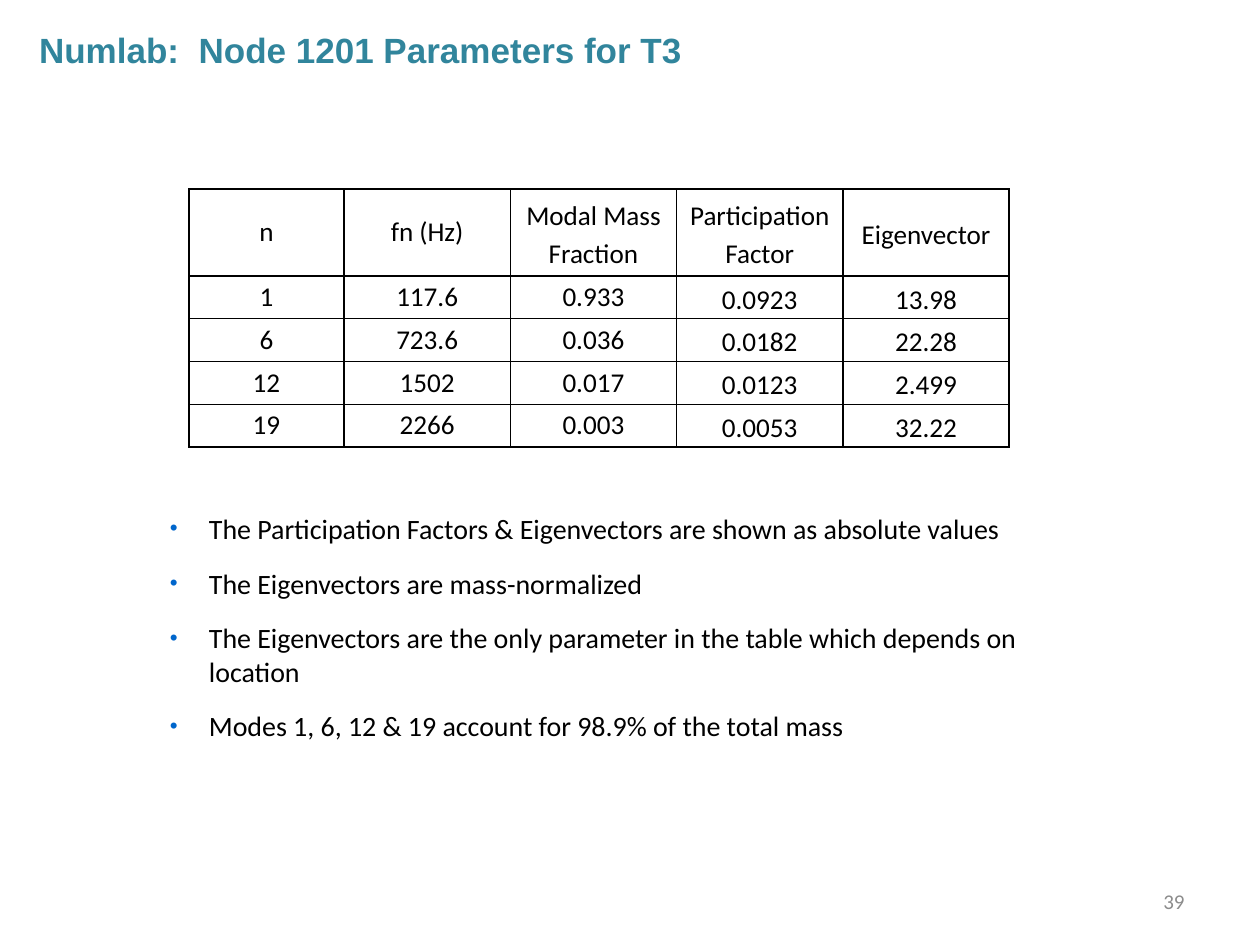
"""Build the slide of modal parameters for node 1201."""
from lxml import etree
from pptx import Presentation
from pptx.dml.color import RGBColor
from pptx.enum.text import MSO_ANCHOR, MSO_AUTO_SIZE, PP_ALIGN
from pptx.oxml.ns import qn
from pptx.util import Inches, Pt

LEFT, MID, RIGHT = PP_ALIGN.LEFT, PP_ALIGN.CENTER, PP_ALIGN.RIGHT
TOP, CENTER = MSO_ANCHOR.TOP, MSO_ANCHOR.MIDDLE
FIXED = MSO_AUTO_SIZE.NONE

TITLE = "Numlab:  Node 1201 Parameters for T3"
PAGE = "39"
ROWS = [
    ("n", "fn (Hz)", "Modal Mass Fraction", "Participation Factor", "Eigenvector"),
    ("1", "117.6", "0.933", "0.0923", "13.98"),
    ("6", "723.6", "0.036", "0.0182", "22.28"),
    ("12", "1502", "0.017", "0.0123", "2.499"),
    ("19", "2266", "0.003", "0.0053", "32.22"),
]
NOTES = [
    "The Participation Factors & Eigenvectors are shown as absolute values",
    "The Eigenvectors are mass-normalized",
    "The Eigenvectors are the only parameter in the table which depends on location",
    "Modes 1, 6, 12 & 19 account for 98.9% of the total mass",
]
WIDTHS = [1.23] + [1.32] * 4
HEIGHTS = [0.69] + [0.34] * 4
THEME = {
    "ink": "000000", "paper": "FFFFFF", "title": "31859C",
    "page": "8C8C8C", "bullet": "0066CC",
    "head": "Arial", "body": "Calibri",
    "title_pt": 20, "cell_pt": 15.5, "note_pt": 16, "page_pt": 12, "rule_pt": 1,
}


def write(frame, lines, size, color=THEME["ink"], font=THEME["body"],
          bold=False, align=LEFT, anchor=TOP, gap=0, lead=1.0, bullet=False):
    frame.word_wrap = True
    frame.vertical_anchor = anchor
    for i, line in enumerate(lines):
        para = frame.add_paragraph() if i else frame.paragraphs[0]
        para.alignment = align
        para.line_spacing = lead
        para.space_before = para.space_after = Pt(gap)
        run = para.add_run()
        run.text = line
        run.font.name, run.font.size, run.font.bold = font, Pt(size), bold
        run.font.color.rgb = RGBColor.from_string(color)
        if bullet:
            mark(para)


def mark(para):
    props = para._p.get_or_add_pPr()
    props.set("marL", str(Inches(0.31)))
    props.set("indent", str(-Inches(0.31)))
    tint = etree.SubElement(props, qn("a:buClr"))
    etree.SubElement(tint, qn("a:srgbClr"), val=THEME["bullet"])
    etree.SubElement(props, qn("a:buSzPct"), val="80000")
    etree.SubElement(props, qn("a:buFont"), typeface="Arial")
    etree.SubElement(props, qn("a:buChar"), char="•")


def border(cell):
    props = cell._tc.get_or_add_tcPr()
    for i, side in enumerate("LRTB"):
        line = etree.Element(qn(f"a:ln{side}"), w=str(Pt(THEME["rule_pt"])))
        fill = etree.SubElement(line, qn("a:solidFill"))
        etree.SubElement(fill, qn("a:srgbClr"), val=THEME["ink"])
        props.insert(i, line)


def place(shape, *box):
    shape.left, shape.top, shape.width, shape.height = map(Inches, box)


def add_grid(slide):
    table = slide.shapes.add_table(
        len(ROWS), len(WIDTHS), Inches(1.5), Inches(1.5),
        Inches(sum(WIDTHS)), Inches(sum(HEIGHTS))).table
    table.first_row = table.horz_banding = False
    for col, width in zip(table.columns, WIDTHS):
        col.width = Inches(width)
    for r, row in enumerate(ROWS):
        table.rows[r].height = Inches(HEIGHTS[r])
        for c, text in enumerate(row):
            cell = table.cell(r, c)
            cell.margin_left = cell.margin_right = Inches(0.07)
            cell.margin_top = cell.margin_bottom = 0
            cell.fill.solid()
            cell.fill.fore_color.rgb = RGBColor.from_string(THEME["paper"])
            border(cell)
            loose = c > 2 or (r == 0 and c == 2)
            write(cell.text_frame, [text], THEME["cell_pt"], align=MID,
                  lead=1.15 if loose else 1.0)
            cell.vertical_anchor = CENTER


def main():
    deck = Presentation()
    deck.slide_width, deck.slide_height = Inches(10), Inches(7.5)
    slide = deck.slides.add_slide(deck.slide_layouts[5])

    title = slide.shapes.title
    place(title, 0.21, 0.18, 8.17, 0.44)
    title.text_frame.auto_size = FIXED
    write(title.text_frame, [TITLE], THEME["title_pt"], color=THEME["title"],
          font=THEME["head"], bold=True, gap=2)

    add_grid(slide)

    notes = slide.shapes.add_textbox(*map(Inches, (1.25, 4.01, 7.58, 1.95)))
    write(notes.text_frame, NOTES, THEME["note_pt"], gap=6, bullet=True)

    page = slide.shapes.add_textbox(*map(Inches, (7.17, 6.95, 2.33, 0.4)))
    write(page.text_frame, [PAGE], THEME["page_pt"], color=THEME["page"],
          align=RIGHT, anchor=CENTER)

    deck.save("out.pptx")


if __name__ == "__main__":
    main()
